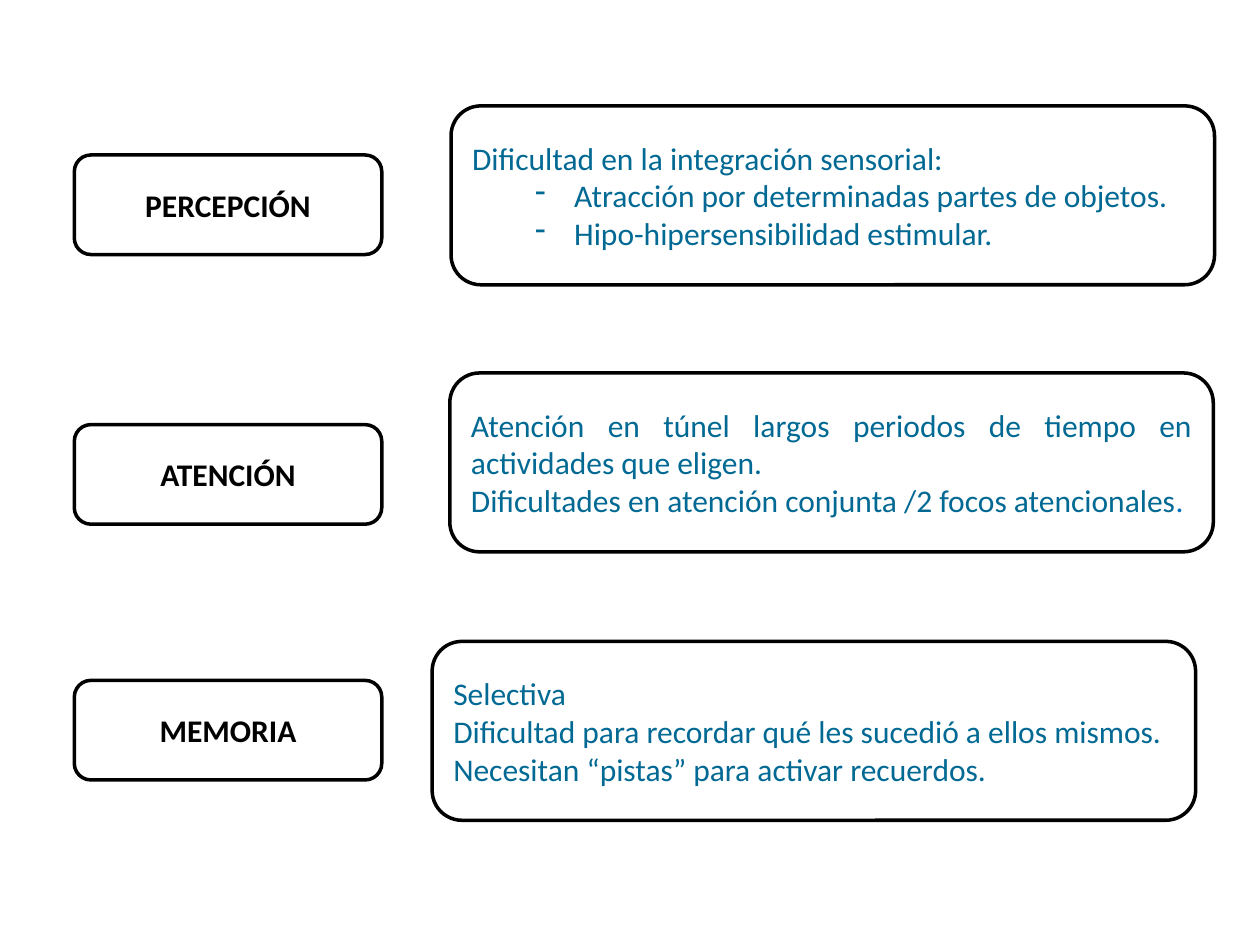
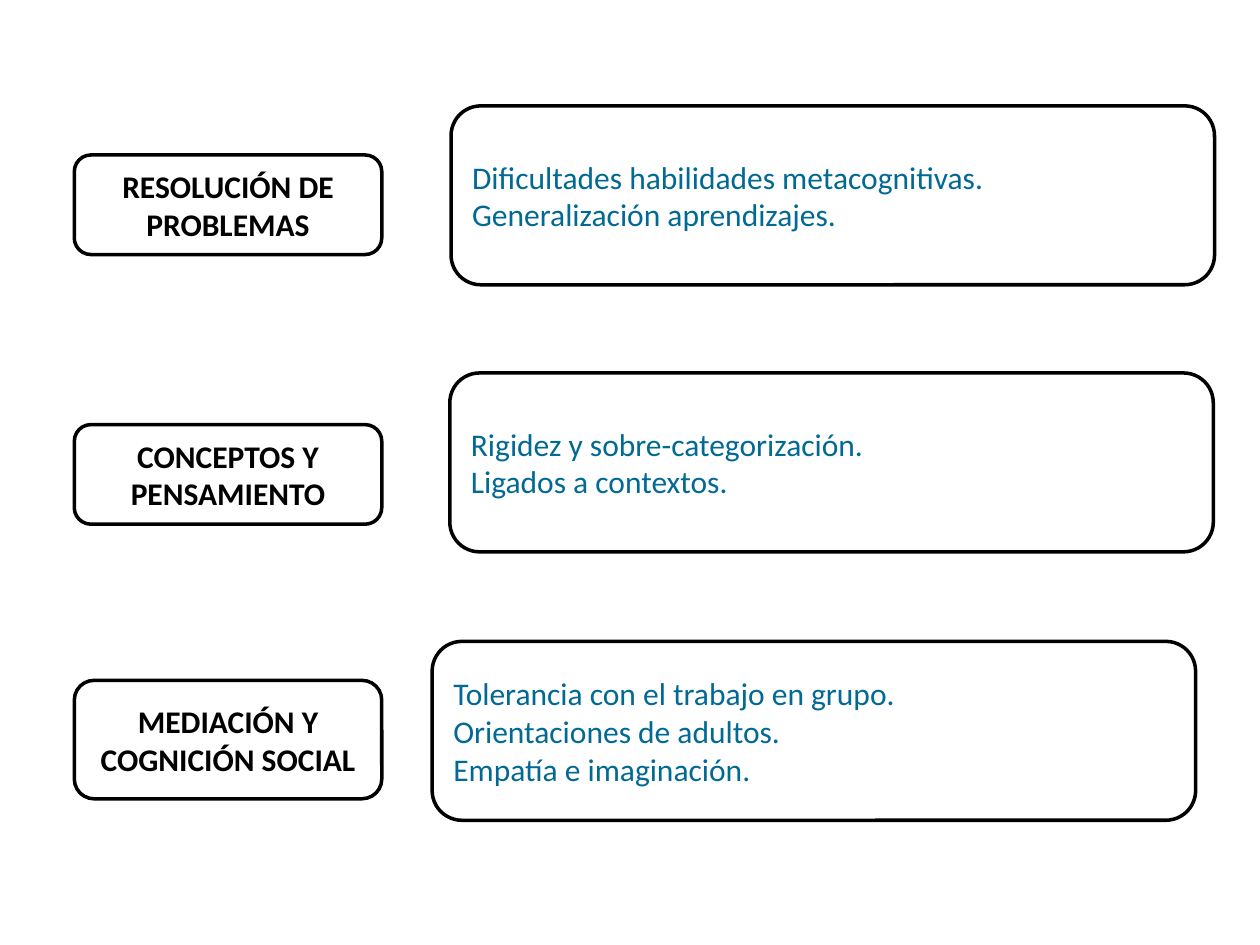
"""Build two slides that pair cognitive areas with their traits."""
from dataclasses import dataclass

import pptx
import pptx.dml.color
import pptx.enum.shapes
import pptx.enum.text
import pptx.oxml.ns
import pptx.slide
import pptx.text.text
import pptx.util
from lxml import etree

Inches = pptx.util.Inches
Pt = pptx.util.Pt
RGB = pptx.dml.color.RGBColor
Align = pptx.enum.text.PP_ALIGN


@dataclass(frozen=True)
class Theme:
    paper: RGB = RGB(0xFF, 0xFF, 0xFF)
    ink: RGB = RGB(0, 0, 0)
    teal: RGB = RGB(0x01, 0x69, 0x93)
    blue: RGB = RGB(0x00, 0x70, 0xC0)
    face: str = "Calibri"
    size: Pt = Pt(18)
    edge: Pt = Pt(2)


@dataclass(frozen=True)
class Box:
    left: float
    top: float
    width: float
    height: float


@dataclass(frozen=True)
class Line:
    text: str
    dash: bool = False
    tail: str = ""


@dataclass(frozen=True)
class Topic:
    name: str
    lines: tuple[Line, ...]
    height: float = 0.79


THEME = Theme()
LABEL_LEFT, LABEL_WIDTH = 0.59, 2.44
NOTE_WIDTH, NOTE_HEIGHT = 6.06, 1.42
LABEL_TOPS = (1.23, 3.37, 5.4)
NOTE_SPOTS = ((3.58, 0.84), (3.57, 2.96), (3.43, 5.09))

DECK = (
    (
        Topic("PERCEPCIÓN", (
            Line("Dificultad en la integración sensorial:"),
            Line("Atracción por determinadas partes de objetos.", dash=True),
            Line("Hipo-hipersensibilidad estimular.", dash=True),
        )),
        Topic("ATENCIÓN", (
            Line("Atención en túnel largos periodos de tiempo en actividades que eligen."),
            Line("Dificultades en atención conjunta /2 focos atencionales", tail="."),
        )),
        Topic("MEMORIA", (
            Line("Selectiva"),
            Line("Dificultad para recordar qué les sucedió a ellos mismos."),
            Line("Necesitan “pistas” para activar recuerdos."),
        )),
    ),
    (
        Topic("RESOLUCIÓN DE PROBLEMAS", (
            Line("Dificultades habilidades metacognitivas."),
            Line("Generalización aprendizajes."),
        )),
        Topic("CONCEPTOS Y PENSAMIENTO", (
            Line("Rigidez y sobre-categorización."),
            Line("Ligados a contextos."),
        )),
        Topic("MEDIACIÓN Y COGNICIÓN SOCIAL", (
            Line("Tolerancia con el trabajo en grupo."),
            Line("Orientaciones de adultos."),
            Line("Empatía e imaginación."),
        ), height=0.94),
    ),
)


def add_dash(para: pptx.text.text._Paragraph) -> None:
    para.level = 1
    props = para._p.get_or_add_pPr()
    props.set("marL", str(Inches(0.81)))
    props.set("indent", str(Inches(-0.31)))
    font = etree.Element(pptx.oxml.ns.qn("a:buFontTx"))
    mark = etree.Element(pptx.oxml.ns.qn("a:buChar"), char="-")
    props.insert(0, font)
    props.insert(1, mark)


def add_box(slide: pptx.slide.Slide, box: Box, lines: tuple[Line, ...],
            color: RGB, align: Align, bold: bool = False) -> None:
    shape = slide.shapes.add_shape(
        pptx.enum.shapes.MSO_SHAPE.ROUNDED_RECTANGLE,
        Inches(box.left), Inches(box.top), Inches(box.width), Inches(box.height))
    shape.shadow.inherit = False
    shape.fill.solid()
    shape.fill.fore_color.rgb = THEME.paper
    shape.line.color.rgb = THEME.ink
    shape.line.width = THEME.edge
    frame = shape.text_frame
    frame.word_wrap = True
    frame.vertical_anchor = pptx.enum.text.MSO_ANCHOR.MIDDLE
    for spot, line in enumerate(lines):
        para = frame.add_paragraph() if spot else frame.paragraphs[0]
        para.alignment = align
        para.font.name = THEME.face
        para.font.size = THEME.size
        para.font.bold = bold
        para.font.color.rgb = color
        para.add_run().text = line.text
        if line.tail:
            tail = para.add_run()
            tail.text = line.tail
            tail.font.color.rgb = THEME.blue
        if line.dash:
            add_dash(para)


def add_page(deck: pptx.presentation.Presentation, topics: tuple[Topic, ...]) -> None:
    slide = deck.slides.add_slide(deck.slide_layouts[6])
    for topic, top in zip(topics, LABEL_TOPS):
        add_box(slide, Box(LABEL_LEFT, top, LABEL_WIDTH, topic.height),
                (Line(topic.name),), THEME.ink, Align.CENTER, bold=True)
    for topic, (left, top) in zip(topics, NOTE_SPOTS):
        add_box(slide, Box(left, top, NOTE_WIDTH, NOTE_HEIGHT),
                topic.lines, THEME.teal, Align.JUSTIFY)


def main() -> None:
    deck = pptx.Presentation()
    deck.slide_width = Inches(10)
    deck.slide_height = Inches(7.5)
    for topics in DECK:
        add_page(deck, topics)
    deck.save("out.pptx")


if __name__ == "__main__":
    main()
